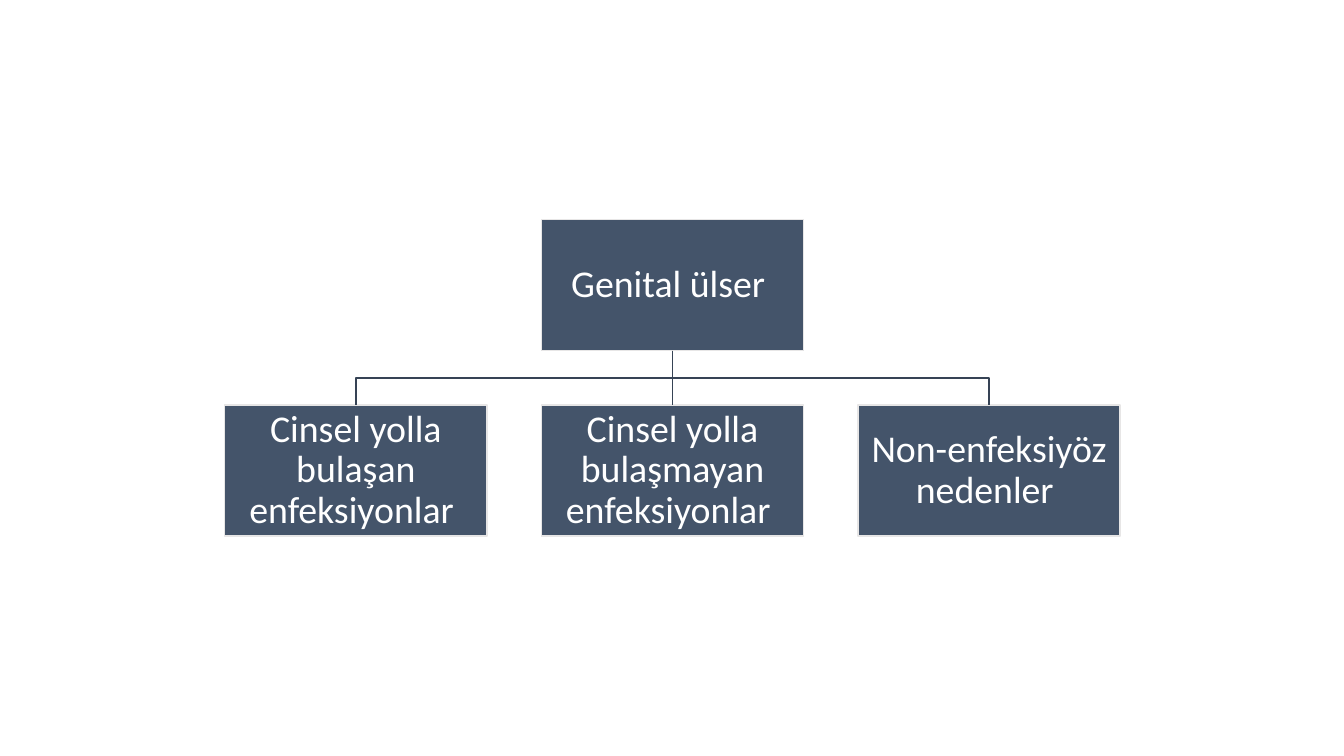
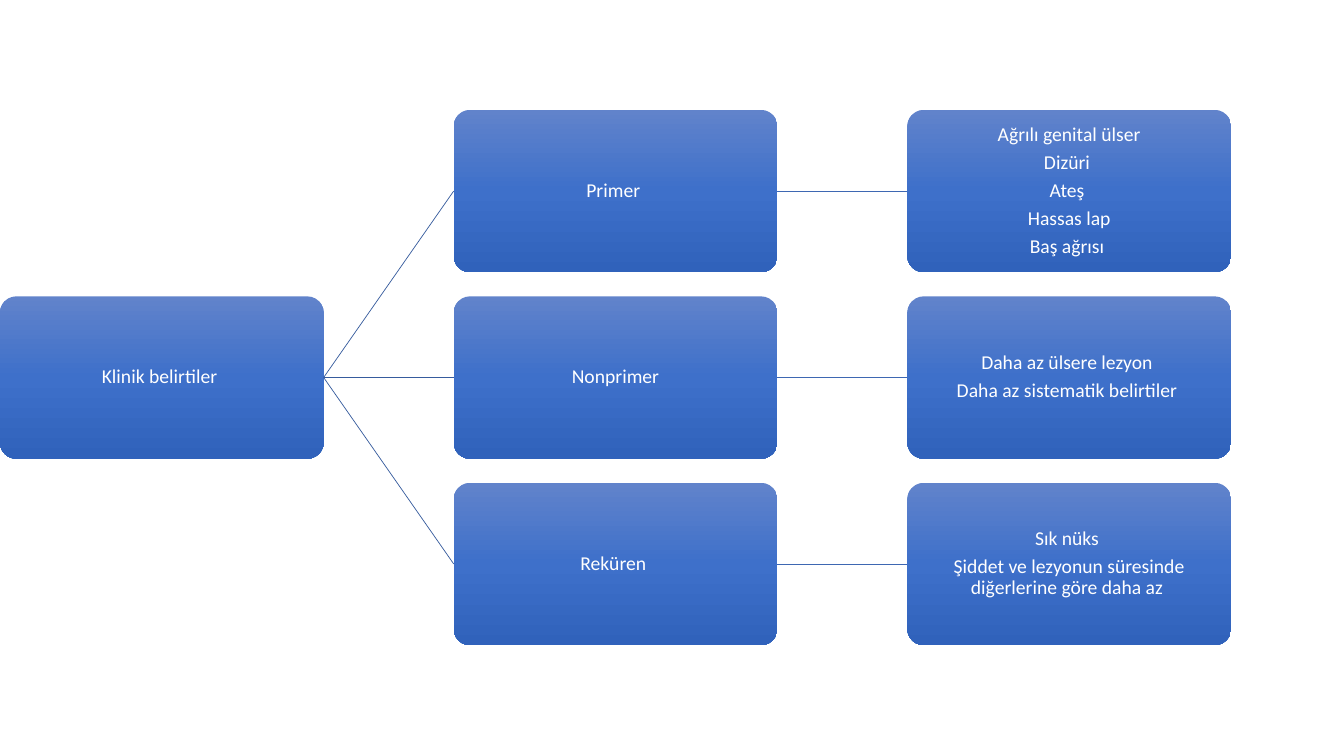
from copy import deepcopy

from pptx import Presentation
from pptx.dml.color import RGBColor as RGB
from pptx.enum.shapes import MSO_CONNECTOR as Link, MSO_SHAPE as Kind
from pptx.enum.text import MSO_ANCHOR as Anchor, PP_ALIGN as Align
from pptx.oxml.ns import qn
from pptx.oxml.xmlchemy import OxmlElement as Element
from pptx.util import Inches, Pt

FONT = "Calibri"
COLORS = {
    "text": "FFFFFF",
    "slate": "44546A",
    "rim": "E7E6E6",
    "branch": "364355",
    "near": "365B9D",
    "far": "3E67B2",
}
BLUES = ((0, "6183CB"), (0.5, "3E70CA"), (1, "3062BB"))

CAUSES = (
    "Cinsel yolla bulaşan enfeksiyonlar ",
    "Cinsel yolla bulaşmayan enfeksiyonlar ",
    "Non-enfeksiyöz nedenler ",
)
SIGNS = (
    ("Primer ", ("Ağrılı genital ülser", "Dizüri ", "Ateş ", "Hassas lap", "Baş ağrısı ")),
    ("Nonprimer", ("Daha az ülsere lezyon ", "Daha az sistematik belirtiler ")),
    ("Reküren ", ("Sık nüks ", "Şiddet ve lezyonun süresinde diğerlerine göre daha az ")),
)


def color(name):
    return RGB.from_string(COLORS[name])


def add_box(slide, kind, at, lines, size, inset):
    """Add a shape with centred text, one paragraph per line."""
    box = slide.shapes.add_shape(kind, *map(Inches, at))
    box.shadow.inherit = False
    frame = box.text_frame
    frame.word_wrap = True
    frame.vertical_anchor = Anchor.MIDDLE
    frame.margin_left = frame.margin_right = Inches(inset)
    frame.margin_top = frame.margin_bottom = Inches(inset)
    for i, line in enumerate(lines):
        para = frame.add_paragraph() if i else frame.paragraphs[0]
        para.text = line
        para.alignment = Align.CENTER
        para.line_spacing = 0.9
        para.space_after = Pt(round(size * 0.35))
        para.font.name = FONT
        para.font.size = Pt(size)
        para.font.color.rgb = color("text")
    return box


def add_cause(slide, x, y, text):
    box = add_box(slide, Kind.RECTANGLE, (x, y, 2.6, 1.3), [text], 27, 0.02)
    box.fill.solid()
    box.fill.fore_color.rgb = color("slate")
    box.line.color.rgb = color("rim")
    box.line.width = Pt(1)
    return box


def add_sign(slide, x, y, lines):
    box = add_box(slide, Kind.ROUNDED_RECTANGLE, (x, y, 3.21, 1.61), lines, 14, 0.01)
    box.adjustments[0] = 0.1
    box.line.fill.background()
    fill = box.fill
    fill.gradient()
    fill.gradient_angle = 270
    stops = box._element.spPr.find(qn("a:gradFill")).find(qn("a:gsLst"))
    stops.append(deepcopy(stops[0]))
    for stop, (pos, shade) in zip(fill.gradient_stops, BLUES):
        stop.position = pos
        stop.color.rgb = RGB.from_string(shade)
    return box


def add_link(slide, start, end, sides, hue, width):
    """Join the given sides of two boxes with a straight line."""
    link = slide.shapes.add_connector(Link.STRAIGHT, 0, 0, 0, 0)
    link.begin_connect(start, sides[0])
    link.end_connect(end, sides[1])
    link.line.color.rgb = color(hue)
    link.line.width = Pt(width)
    link._element.spPr.append(Element("a:effectLst"))


def add_elbow(slide, top, low):
    """Draw a bent line from the bottom of one box to the top of another."""
    x1, y1 = top.left + top.width // 2, top.top + top.height
    x2, y2 = low.left + low.width // 2, low.top
    mid = (y1 + y2) // 2
    path = slide.shapes.build_freeform(x1, y1)
    path.add_line_segments([(x1, mid), (x2, mid), (x2, y2)], close=False)
    bend = path.convert_to_shape()
    bend.shadow.inherit = False
    bend.fill.background()
    bend.line.color.rgb = color("branch")
    bend.line.width = Pt(1)


def draw_causes(slide):
    left, step = 5.37, 3.14
    top = add_cause(slide, left, 2.18, "Genital ülser ")
    for i, text in enumerate(CAUSES):
        low = add_cause(slide, left + (i - 1) * step, 4.02, text)
        if i == 1:
            add_link(slide, top, low, (2, 0), "branch", 1)
        else:
            add_elbow(slide, top, low)


def draw_signs(slide):
    top, row, col = 1.09, 1.85, 4.5
    root = add_sign(slide, 0, top + row, ["Klinik belirtiler "])
    for i, (name, lines) in enumerate(SIGNS):
        y = top + i * row
        form = add_sign(slide, col, y, [name])
        leaf = add_sign(slide, 2 * col, y, lines)
        add_link(slide, root, form, (3, 1), "near", 0.5)
        add_link(slide, form, leaf, (3, 1), "far", 0.5)


def main():
    deck = Presentation()
    deck.slide_width, deck.slide_height = Inches(13.33), Inches(7.5)
    for draw in (draw_causes, draw_signs):
        draw(deck.slides.add_slide(deck.slide_layouts[6]))
    deck.save("out.pptx")


if __name__ == "__main__":
    main()
